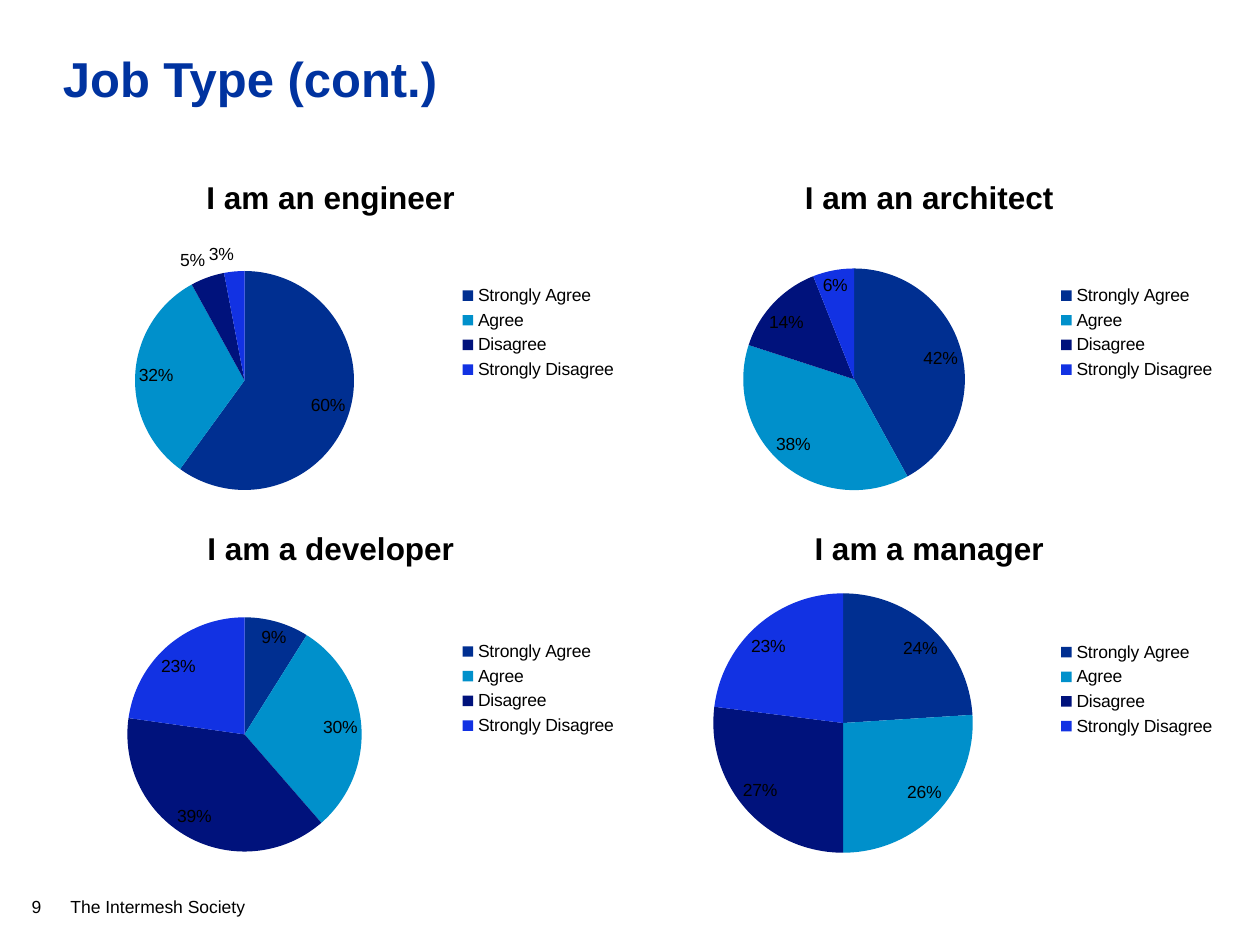
from lxml import etree
from pptx import Presentation
from pptx.chart.data import CategoryChartData
from pptx.dml.color import RGBColor
from pptx.enum.chart import XL_CHART_TYPE, XL_LABEL_POSITION, XL_LEGEND_POSITION
from pptx.enum.text import MSO_ANCHOR
from pptx.oxml.ns import qn
from pptx.util import Inches, Pt

PIE = XL_CHART_TYPE.PIE
BEST_FIT = XL_LABEL_POSITION.BEST_FIT
RIGHT = XL_LEGEND_POSITION.RIGHT
TOP = MSO_ANCHOR.TOP
BOTTOM = MSO_ANCHOR.BOTTOM

BLACK = RGBColor(0x00, 0x00, 0x00)
TITLE_BLUE = RGBColor(0x00, 0x33, 0xA0)
SLICE_COLORS = [
    RGBColor(0x00, 0x2F, 0x91),
    RGBColor(0x00, 0x90, 0xCB),
    RGBColor(0x00, 0x12, 0x7C),
    RGBColor(0x12, 0x32, 0xE3),
]
FONT = "Arial"
ANSWERS = ["Strongly Agree", "Agree", "Disagree", "Strongly Disagree"]
CHART_W = 4.75

prs = Presentation()
prs.slide_width = Inches(10)
prs.slide_height = Inches(7.5)
s = prs.slides.add_slide(prs.slide_layouts[6])


def set_font(font, size, color=BLACK, bold=False):
    font.name = FONT
    font.size = Pt(size)
    font.bold = bold
    font.color.rgb = color


def add_text(text, box, anchor, insets, size, color=BLACK, bold=False):
    sp = s.shapes.add_textbox(*map(Inches, box))
    tf = sp.text_frame
    tf.word_wrap = True
    tf.vertical_anchor = anchor
    tf.margin_left = tf.margin_right = Inches(0.25)
    tf.margin_top, tf.margin_bottom = map(Inches, insets)
    p = tf.paragraphs[0]
    p.text = text
    p.line_spacing = 0.9 if bold else 1.0
    set_font(p.runs[0].font, size, color, bold)


add_text("The Intermesh Society", (0.31, 7.03, 2, 0.47), BOTTOM, (0.05, 0.22), 10)
add_text("Job Type (cont.)", (0.25, 0.25, 9.5, 1), TOP, (0.2, 0.25), 28, TITLE_BLUE, True)

# title, values, left, top, height, pie centre x, pie centre y, radius
PIES = [
    ("I am an engineer", (60, 32, 5, 3), 0.25, 1.25, 2.78, 1.94, 3.02, 0.87),
    ("I am a developer", (9, 30, 39, 23), 0.25, 4.03, 2.87, 1.94, 5.83, 0.93),
    ("I am an architect", (42, 38, 14, 6), 5, 1.25, 2.78, 6.78, 3.01, 0.88),
    ("I am a manager", (24, 26, 27, 23), 5, 4.03, 2.88, 6.69, 5.74, 1.03),
]

for title, values, left, top, height, cx, cy, radius in PIES:
    data = CategoryChartData()
    data.categories = ANSWERS
    data.add_series(title, values)
    box = map(Inches, (left, top, CHART_W, height))
    chart = s.shapes.add_chart(PIE, *box, data).chart
    set_font(chart.font, 10)

    chart.has_title = True
    tf = chart.chart_title.text_frame
    tf.text = title
    set_font(tf.paragraphs[0].runs[0].font, 18, bold=True)

    chart.has_legend = True
    chart.legend.position = RIGHT
    chart.legend.include_in_layout = False
    set_font(chart.legend.font, 10)

    plot = chart.plots[0]
    plot.vary_by_categories = True
    plot.has_data_labels = True
    labels = plot.data_labels
    labels.show_percentage = True
    labels.show_value = False
    labels.number_format = "0%"
    labels.number_format_is_linked = False
    labels.position = BEST_FIT
    set_font(labels.font, 10)
    for i, color in enumerate(SLICE_COLORS):
        fill = plot.series[0].points[i].format.fill
        fill.solid()
        fill.fore_color.rgb = color

    area = chart.element.find(".//" + qn("c:plotArea"))
    layout = area.find(qn("c:layout"))
    if layout is None:
        layout = etree.Element(qn("c:layout"))
        area.insert(0, layout)
    manual = etree.SubElement(layout, qn("c:manualLayout"))
    settings = {
        "layoutTarget": "inner",
        "xMode": "edge",
        "yMode": "edge",
        "x": round((cx - radius - left) / CHART_W, 3),
        "y": round((cy - radius - top) / height, 3),
        "w": round(2 * radius / CHART_W, 3),
        "h": round(2 * radius / height, 3),
    }
    for tag, value in settings.items():
        etree.SubElement(manual, qn("c:" + tag), val=str(value))

add_text("9", (0, 7.02, 0.68, 0.48), BOTTOM, (0.05, 0.22), 10)

prs.save("out.pptx")
